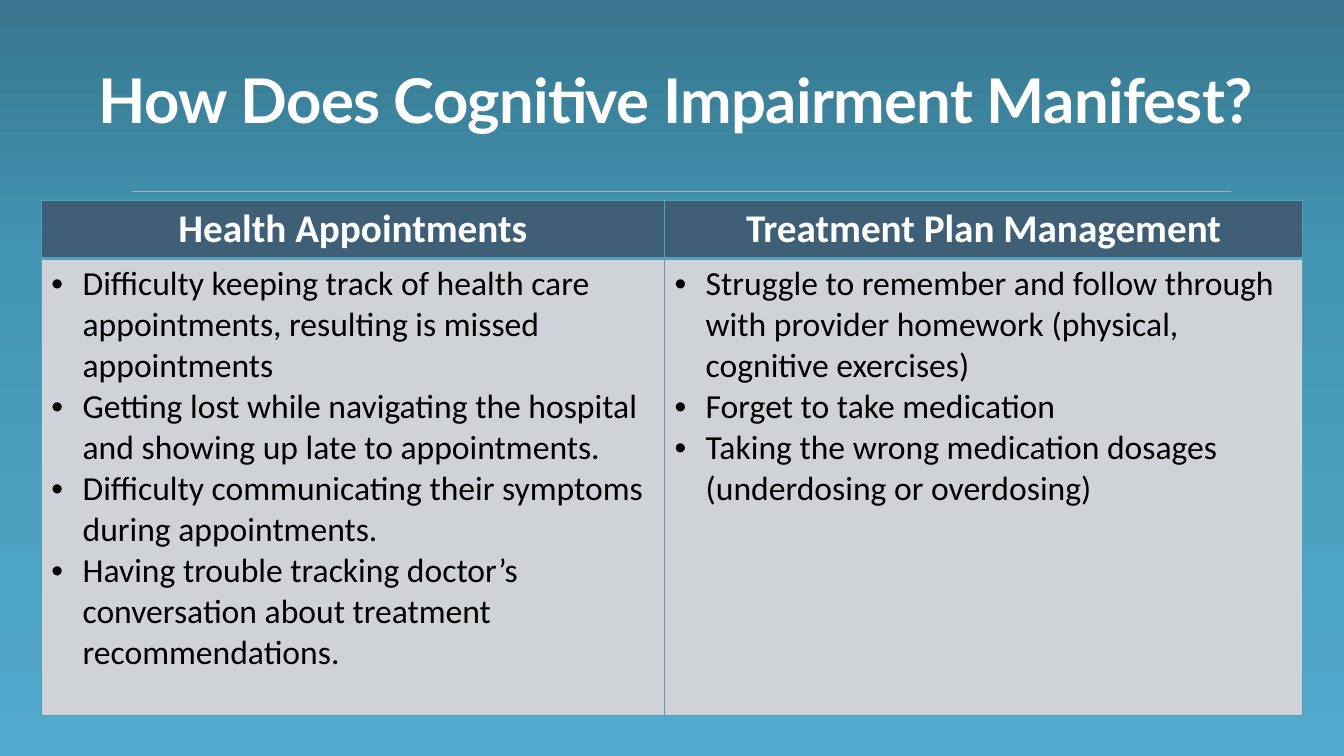
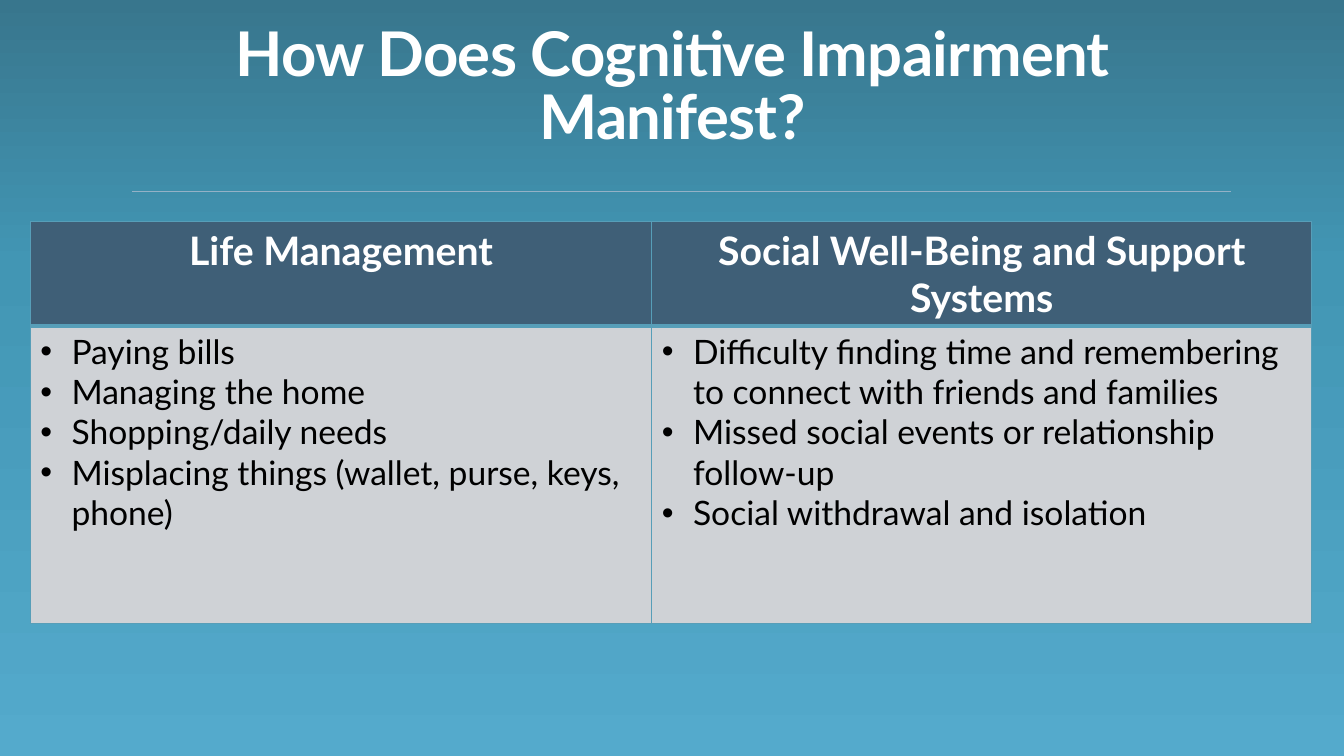
from lxml import etree
from pptx import Presentation
from pptx import util as u
from pptx.dml.color import RGBColor
from pptx.enum import text
from pptx.oxml import ns
from copy import deepcopy

COLORS = {
    "sky": "54AACC", "lake": "4296B4", "deep": "38768D", "rule": "94B1C6",
    "header": "3F5F77", "body": "CFD2D6", "border": "579EB8",
    "white": "FFFFFF", "black": "000000",
}
WIDTH, HEIGHT = 13.33, 7.5
TITLE = "How Does Cognitive Impairment Manifest?"
INDENT = u.Inches(0.31)

SLIDES = [
    {
        "title_box": (0.01, -0.19, 13.39, 1.59),
        "table_box": (0.41, 1.99, 12.51, 5.06),
        "first_column": 0.494, "header_height": 0.53, "font": "Calibri",
        "columns": {
            "Health Appointments": [
                "Difficulty keeping track of health care appointments, resulting is missed appointments",
                "Getting lost while navigating the hospital and showing up late to appointments.",
                "Difficulty communicating their symptoms during appointments.",
                "Having trouble tracking doctor’s conversation about treatment recommendations.",
            ],
            "Treatment Plan Management": [
                "Struggle to remember and follow through with provider homework (physical, cognitive exercises)",
                "Forget to take medication",
                "Taking the wrong medication dosages (underdosing or overdosing)",
            ],
        },
    },
    {
        "title_box": (1.17, 0.46, 11, 1.1),
        "table_box": (0.3, 2.2, 12.71, 3.57),
        "first_column": 0.485, "header_height": 0.62, "font": "Lato",
        "columns": {
            "Life Management": [
                "Paying bills",
                "Managing the home",
                "Shopping/daily needs",
                "Misplacing things (wallet, purse, keys, phone)",
            ],
            "Social Well-Being and Support Systems": [
                "Difficulty finding time and remembering to connect with friends and families",
                "Missed social events or relationship follow-up",
                "Social withdrawal and isolation",
            ],
        },
    },
]


def color(name):
    """Return a palette colour."""
    return RGBColor.from_string(COLORS[name])


def inches(box):
    """Convert a box to lengths."""
    return [u.Inches(value) for value in box]


def add_element(parent, tag, **attributes):
    """Append a drawing element to a parent."""
    return etree.SubElement(parent, ns.qn(tag), attributes)


def set_font(paragraph, name, size, tone, bold):
    """Format all the text of a paragraph."""
    font = paragraph.font
    font.name, font.size, font.bold = name, u.Pt(size), bold
    font.color.rgb = color(tone)


def paint_background(master):
    """Give the master a three-stop vertical gradient."""
    fill = master.background.fill
    fill.gradient()
    fill.gradient_angle = 90
    stop_list = master.element.xpath(".//p:bg//a:gsLst")[0]
    stop_list.insert(1, deepcopy(stop_list[0]))
    for stop, tone, position in zip(fill.gradient_stops, ("sky", "lake", "deep"), (0, 0.65, 1)):
        stop.color.rgb = color(tone)
        stop.position = position


def draw_rule(page):
    """Draw the thin line under the title."""
    left, right, top = inches((1.31, 12.21, 1.9))
    rule = page.shapes.add_connector(1, left, top, right, top)
    rule.line.color.rgb = color("rule")
    rule.line.width = u.Pt(0.5)
    add_element(rule._element.spPr, "a:effectLst")


def write_title(page, box):
    """Place and format the title placeholder."""
    title = page.shapes.title
    title.left, title.top, title.width, title.height = inches(box)
    frame = title.text_frame
    frame.text = TITLE
    frame.auto_size = text.MSO_AUTO_SIZE.NONE
    frame.vertical_anchor = text.MSO_ANCHOR.BOTTOM
    para = frame.paragraphs[0]
    para.alignment = text.PP_ALIGN.CENTER
    para.line_spacing = 0.85
    set_font(para, "Lato", 44, "white", True)
    para.font._rPr.set("spc", "-50")


def style_cell(cell, tone, thick_side):
    """Set the borders and then the fill of a cell."""
    properties = cell._tc.get_or_add_tcPr()
    for side in "LRTB":
        width = u.Pt(3 if side == thick_side else 1)
        line = add_element(properties, f"a:ln{side}", w=str(width))
        add_element(add_element(line, "a:solidFill"), "a:srgbClr", val=COLORS["border"])
    cell.fill.solid()
    cell.fill.fore_color.rgb = color(tone)


def write_header(cell, label, font):
    """Fill a column heading."""
    style_cell(cell, "header", "B")
    cell.text = label
    para = cell.text_frame.paragraphs[0]
    para.alignment = text.PP_ALIGN.CENTER
    set_font(para, font, 28, "white", True)


def write_bullets(cell, items, font):
    """Fill a cell with a bulleted list."""
    style_cell(cell, "body", "T")
    cell.text = "\n".join(items)
    for para in cell.text_frame.paragraphs:
        properties = para._p.get_or_add_pPr()
        properties.set("marL", str(INDENT))
        properties.set("indent", str(-INDENT))
        add_element(properties, "a:buFont", typeface="Arial")
        add_element(properties, "a:buChar", char="•")
        set_font(para, font, 24, "black", False)


def draw_table(page, box, columns, first_column, header_height, font):
    """Draw a two-column comparison table in the box."""
    width, height = box[2:]
    table = page.shapes.add_table(2, 2, *inches(box)).table
    table.horz_banding = False
    for column, share in zip(table.columns, (first_column, 1 - first_column)):
        column.width = u.Inches(width * share)
    for row, size in zip(table.rows, (header_height, height - header_height)):
        row.height = u.Inches(size)
    for index, (label, items) in enumerate(columns.items()):
        write_header(table.cell(0, index), label, font)
        write_bullets(table.cell(1, index), items, font)


def build_slide(deck, content):
    """Add one comparison slide."""
    page = deck.slides.add_slide(deck.slide_layouts[5])
    draw_rule(page)
    write_title(page, content["title_box"])
    draw_table(page, content["table_box"], content["columns"],
               content["first_column"], content["header_height"], content["font"])


def main():
    """Build and save the deck."""
    deck = Presentation()
    deck.slide_width, deck.slide_height = inches((WIDTH, HEIGHT))
    paint_background(deck.slide_master)
    for content in SLIDES:
        build_slide(deck, content)
    deck.save("out.pptx")


if __name__ == "__main__":
    main()
